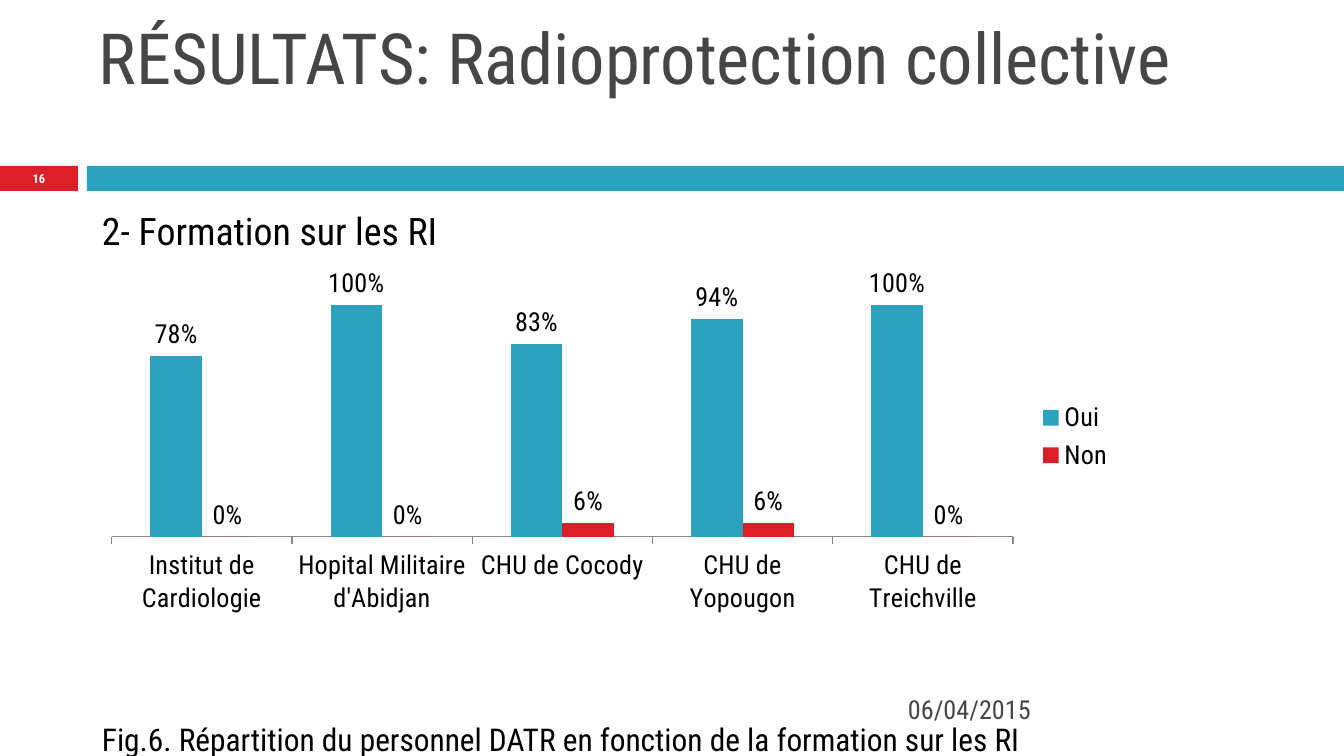
from dataclasses import dataclass

from lxml.etree import SubElement
from pptx import Presentation
from pptx.chart.data import CategoryChartData
from pptx.dml.color import RGBColor
from pptx.enum.chart import XL_CHART_TYPE as ChartType
from pptx.enum.chart import XL_LABEL_POSITION as LabelPosition
from pptx.enum.chart import XL_LEGEND_POSITION as LegendPosition
from pptx.enum.chart import XL_TICK_MARK as TickMark
from pptx.enum.shapes import MSO_SHAPE as Shape
from pptx.enum.text import MSO_ANCHOR as Anchor
from pptx.enum.text import PP_ALIGN as Align
from pptx.oxml.ns import qn
from pptx.util import Emu, Pt


@dataclass(frozen=True)
class Theme:
    """Hold the colours and type sizes of the slide."""
    font: str = "Roboto Condensed"
    teal: str = "2DA2BF"
    red: str = "DA1F28"
    grey: str = "464646"
    axis: str = "868686"
    black: str = "000000"
    white: str = "FFFFFF"
    title: float = 37.8
    heading: float = 20.3
    caption: float = 16.8
    label: float = 14
    number: float = 6.7


THEME = Theme()
CATEGORIES = ["Institut de Cardiologie", "Hopital Militaire d'Abidjan",
              "CHU de Cocody", "CHU de Yopougon", "CHU de Treichville"]
ANSWERS = [("Oui", [0.78, 1, 0.83, 0.94, 1], THEME.teal),
           ("Non", [0, 0, 0.06, 0.06, 0], THEME.red)]
PLOT_LAYOUT = {"layoutTarget": "inner", "xMode": "edge", "yMode": "edge",
               "x": 0.02, "y": 0.02, "w": 0.87, "h": 0.75}


def px(length):
    """Turn pixels into EMU."""
    return Emu(round(length * 914400 / 134.4))


def style_font(font, size, color, bold=False):
    """Set the theme typeface with a size and a colour."""
    font.name, font.size, font.bold = THEME.font, Pt(size), bold
    font.color.rgb = RGBColor.from_string(color)


def add_band(page, left, top, width, height, color):
    """Add a plain filled rectangle."""
    band = page.shapes.add_shape(Shape.RECTANGLE, *map(px, (left, top, width, height)))
    band.shadow.inherit = False
    band.fill.solid()
    band.fill.fore_color.rgb = RGBColor.from_string(color)
    band.line.fill.background()


def add_text(page, frame, lines, anchor=Anchor.TOP, align=Align.LEFT,
             margins=(9, 4), bold=False):
    """Add a text box whose lines are (text, size, colour, points before)."""
    box = page.shapes.add_textbox(*map(px, frame))
    text = box.text_frame
    text.word_wrap = True
    text.vertical_anchor = anchor
    text.margin_left = text.margin_right = px(margins[0])
    text.margin_top = text.margin_bottom = px(margins[1])
    for index, (words, size, color, before) in enumerate(lines):
        para = text.add_paragraph() if index else text.paragraphs[0]
        para.text = words
        para.alignment = align
        para.space_before = Pt(before)
        style_font(para.font, size, color, bold)


def place_plot(chart):
    """Fix the inner plot area inside the chart frame."""
    area = chart.plots[0]._element.getparent()
    layout = area.find(qn("c:layout"))
    if layout is None:
        layout = SubElement(area, qn("c:layout"))
        area.insert(0, layout)
    manual = SubElement(layout, qn("c:manualLayout"))
    for name, value in PLOT_LAYOUT.items():
        SubElement(manual, qn(f"c:{name}")).set("val", str(value))


def add_columns(page, left, top, width, height):
    """Add the clustered columns of training answers per hospital."""
    data = CategoryChartData(number_format="0%")
    data.categories = CATEGORIES
    for name, shares, _ in ANSWERS:
        data.add_series(name, shares)
    frame = page.shapes.add_chart(ChartType.COLUMN_CLUSTERED,
                                  *map(px, (left, top, width, height)), data)
    chart = frame.chart
    style_font(chart.font, THEME.label, THEME.black)
    chart.has_title = False
    chart.has_legend = True
    chart.legend.position = LegendPosition.RIGHT
    chart.legend.include_in_layout = False
    scale = chart.value_axis
    scale.visible = scale.has_major_gridlines = False
    scale.minimum_scale, scale.maximum_scale = 0, 1.2
    axis = chart.category_axis
    axis.major_tick_mark = TickMark.OUTSIDE
    axis.format.line.color.rgb = RGBColor.from_string(THEME.axis)
    plot = chart.plots[0]
    plot.gap_width, plot.overlap = 150, 0
    plot.vary_by_categories = False
    for series, (_, _, color) in zip(plot.series, ANSWERS):
        series.invert_if_negative = False
        series.format.fill.solid()
        series.format.fill.fore_color.rgb = RGBColor.from_string(color)
        labels = series.data_labels
        labels.show_value = True
        labels.number_format, labels.number_format_is_linked = "0%", False
        labels.position = LabelPosition.OUTSIDE_END
    place_plot(chart)


def main():
    """Build the slide and save it."""
    deck = Presentation()
    deck.slide_width, deck.slide_height = px(1344), px(756)
    page = deck.slides.add_slide(deck.slide_layouts[6])
    add_band(page, 0, 166, 78, 25, THEME.red)
    add_band(page, 87, 166, 1257, 25, THEME.teal)
    add_text(page, (896, 689, 392, 40),
             [("06/04/2015", THEME.label, THEME.grey, 0)], Anchor.MIDDLE, margins=(12, 4))
    add_text(page, (0, 165, 78, 27), [("16", THEME.number, THEME.white, 0)],
             Anchor.MIDDLE, Align.CENTER, bold=True)
    add_text(page, (90, 199, 1199, 497),
             [("2- Formation sur les RI", THEME.heading, THEME.black, 0),
              ("Fig.6. Répartition du personnel DATR en fonction de la formation sur les RI",
               THEME.caption, THEME.black, 250)], margins=(12, 9))
    add_columns(page, 91, 251, 1036, 371)
    add_text(page, (90, 17, 1199, 86),
             [("RÉSULTATS: Radioprotection collective", THEME.title, THEME.grey, 0)],
             Anchor.BOTTOM)
    deck.save("out.pptx")


if __name__ == "__main__":
    main()
